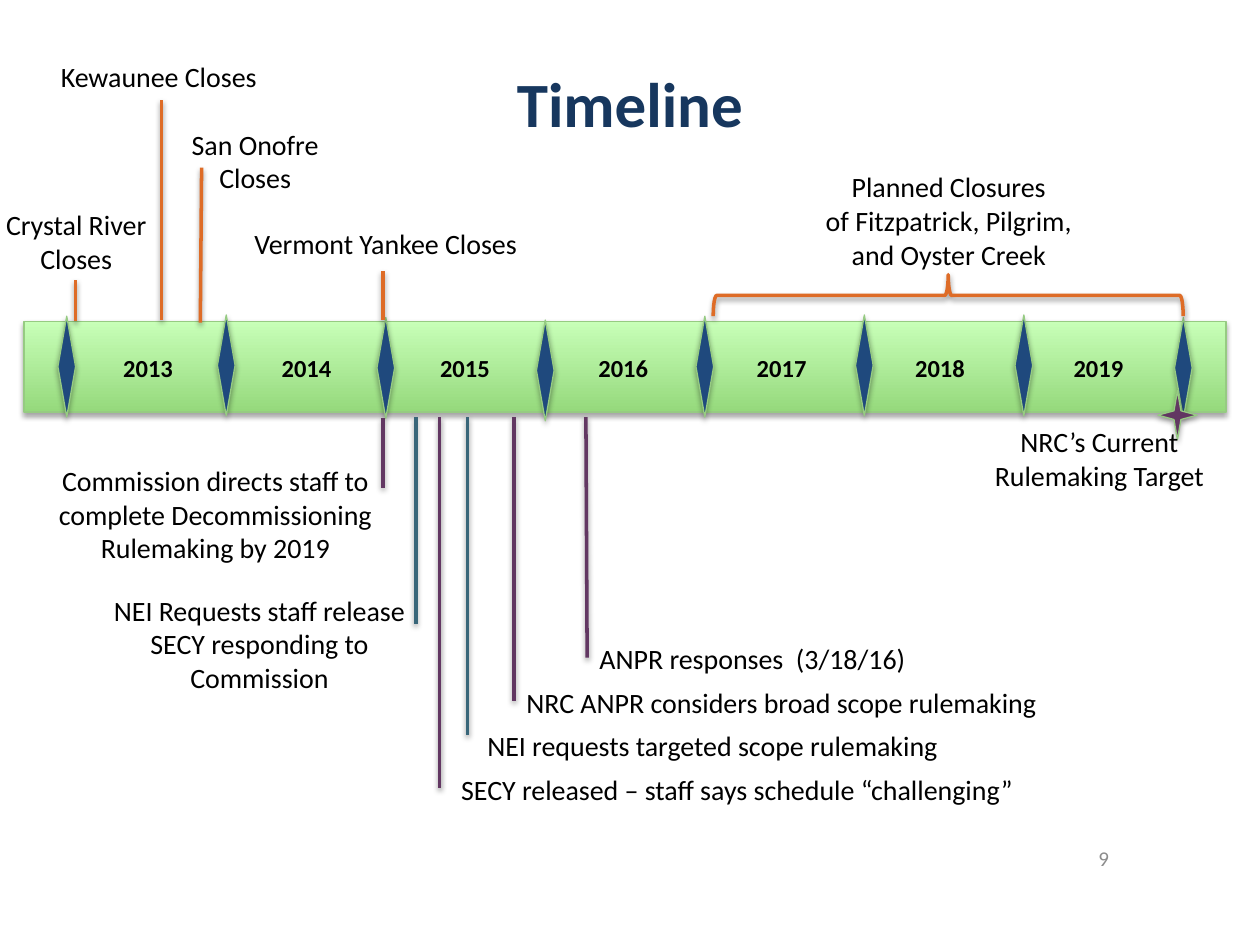
from lxml import etree
from pptx import Presentation
from pptx.dml.color import RGBColor
from pptx.enum.shapes import MSO_CONNECTOR, MSO_SHAPE
from pptx.enum.text import MSO_ANCHOR, MSO_AUTO_SIZE, PP_ALIGN
from pptx.oxml.ns import qn
from pptx.util import Inches, Pt

LEFT, CENTER, RIGHT = PP_ALIGN.LEFT, PP_ALIGN.CENTER, PP_ALIGN.RIGHT
TOP, MIDDLE = MSO_ANCHOR.TOP, MSO_ANCHOR.MIDDLE
STRAIGHT = MSO_CONNECTOR.STRAIGHT
RECTANGLE, STAR = MSO_SHAPE.RECTANGLE, MSO_SHAPE.STAR_4_POINT
DIAMOND, BRACE = MSO_SHAPE.FLOWCHART_DECISION, MSO_SHAPE.LEFT_BRACE

# The slide is a grid of 100 columns by 75 rows.
COLUMNS, ROWS = 100, 75
CELL = Inches(0.1)

FONT = "Calibri"
BLACK, NAVY, GREY = "000000", "17375E", "8C8C8C"
ORANGE, PURPLE, TEAL = "DE6C27", "623762", "396679"
MARKER_BLUE, EDGE_GREEN = "1F497D", "96CB82"
BAND_DARK, BAND_LIGHT = "95D97C", "C8FFB8"

MARKER_TOPS = [25.1, 25, 25.2, 25.4, 25.1, 25, 25, 25.2]
MARKER_START, MARKER_STEP = 4.6, 12.66
YEAR_START, YEAR_STEP = 8.8, 12.57

# Start column and row, end column and row, colour
EVENT_LINES = [
    (30.4, 25.4, 30.4, 21.5, ORANGE),
    (15.9, 25.6, 16, 13.3, ORANGE),
    (6, 25.5, 6, 22.2, ORANGE),
    (12.8, 25.4, 12.8, 7.9, ORANGE),
    (30.4, 33.2, 30.4, 38.7, PURPLE),
    (33, 33.1, 33, 49.5, TEAL),
    (34.9, 33.1, 34.9, 62.5, PURPLE),
    (37.1, 33.1, 37.1, 58.3, TEAL),
    (40.8, 33.1, 40.8, 55.6, PURPLE),
    (46.5, 33.1, 46.6, 52.2, PURPLE),
]

# Left, top, width, height, paragraphs
WRAPPED_LABELS = [
    (3.3, 36.3, 27.6, 9.1, ["Commission directs staff to complete Decommissioning Rulemaking by 2019"]),
    (7.6, 46.6, 26, 9.1, ["NEI Requests staff release SECY responding to Commission"]),
    (34.9, 60.8, 47.2, 3.7, ["SECY released – staff says schedule “challenging”"]),
    (37.1, 57.3, 38.9, 3.7, ["NEI requests targeted scope rulemaking"]),
    (77, 33.2, 20.5, 6.4, ["NRC’s Current Rulemaking Target"]),
    (-1.6, 16, 15.3, 6.4, ["Crystal River Closes"]),
    (2, 4.2, 21.2, 3.7, ["Kewaunee Closes"]),
]
UNWRAPPED_LABELS = [
    (64.4, 13, 21.8, 9.1, ["Planned Closures", "of Fitzpatrick, Pilgrim,", "and Oyster Creek"], CENTER),
    (13.9, 9.6, 12.7, 6.4, ["San Onofre", "Closes"], CENTER),
    (19.2, 17.5, 23.1, 3.7, ["Vermont Yankee Closes"], LEFT),
    (40.8, 53.9, 43, 3.7, ["NRC ANPR considers broad scope rulemaking"], LEFT),
    (46.6, 50.4, 26.6, 3.7, ["ANPR responses  (3/18/16)"], LEFT),
]


def cells(*values):
    return [round(value * CELL) for value in values]


def color(hex_code):
    return RGBColor.from_string(hex_code)


def add_shadow(item, opacity, distance):
    """Cast a soft black shadow downwards; the outline must be set first."""
    effects = etree.SubElement(item._element.spPr, qn("a:effectLst"))
    shadow = etree.SubElement(
        effects, qn("a:outerShdw"), blurRad=str(Pt(3.1)), dist=str(Pt(distance)),
        dir="5400000", rotWithShape="0")
    black = etree.SubElement(shadow, qn("a:srgbClr"), val=BLACK)
    etree.SubElement(black, qn("a:alpha"), val=str(opacity * 1000))


def add_marker(page, kind, frame, fill=None):
    """Add a green-edged shape with a shadow; without a fill it gets the band gradient."""
    shape = page.shapes.add_shape(kind, *cells(*frame))
    if fill:
        shape.fill.solid()
        shape.fill.fore_color.rgb = color(fill)
    else:
        shape.fill.gradient()
        shape.fill.gradient_angle = 90
        for stop, shade in zip(shape.fill.gradient_stops, (BAND_DARK, BAND_LIGHT)):
            stop.color.rgb = color(shade)
    shape.line.color.rgb = color(EDGE_GREEN)
    shape.line.width = Pt(0.75)
    add_shadow(shape, 35, 1.8)


def add_brace(page, frame):
    brace = page.shapes.add_shape(BRACE, *cells(*frame))
    brace.rotation = 90
    brace.fill.background()
    brace.line.color.rgb = color(ORANGE)
    brace.line.width = Pt(2)
    add_shadow(brace, 38, 1.6)


def add_event_line(page, ends, shade):
    line = page.shapes.add_connector(STRAIGHT, *cells(*ends))
    line.line.color.rgb = color(shade)
    line.line.width = Pt(2)
    add_shadow(line, 38, 1.6)


def add_text(page, frame, paragraphs, size=16, shade=BLACK, bold=False,
             align=CENTER, anchor=TOP, wrap=True, grow=True):
    box = page.shapes.add_textbox(*cells(*frame))
    text = box.text_frame
    text.word_wrap = wrap
    text.auto_size = MSO_AUTO_SIZE.SHAPE_TO_FIT_TEXT if grow else MSO_AUTO_SIZE.NONE
    text.vertical_anchor = anchor
    for index, words in enumerate(paragraphs):
        para = text.paragraphs[0] if index == 0 else text.add_paragraph()
        para.alignment = align
        span = para.add_run()
        span.text = words
        span.font.name = FONT
        span.font.size = Pt(size)
        span.font.bold = bold
        span.font.color.rgb = color(shade)


def add_year_band(page):
    add_marker(page, RECTANGLE, (1.9, 25.5, 95.4, 7.2))
    for index, top in enumerate(MARKER_TOPS):
        left = MARKER_START + index * MARKER_STEP
        add_marker(page, DIAMOND, (left, top, 1.4, 8), MARKER_BLUE)
    for index, year in enumerate(range(2013, 2020)):
        left = YEAR_START + index * YEAR_STEP
        add_text(page, (left, 27.5, 6, 3.4), [str(year)], size=14, bold=True,
                 align=LEFT, wrap=False)


def main():
    deck = Presentation()
    deck.slide_width, deck.slide_height = cells(COLUMNS, ROWS)
    page = deck.slides.add_slide(deck.slide_layouts[6])

    add_text(page, (0, 2.8, COLUMNS, 10.6), ["Timeline"], size=36, shade=NAVY,
             bold=True, anchor=MIDDLE, grow=False)
    add_year_band(page)
    add_brace(page, (73.6, 4.8, 3.3, 37.3))
    for *ends, shade in EVENT_LINES:
        add_event_line(page, ends, shade)
    add_marker(page, STAR, (91.9, 31, 3.1, 3.9), PURPLE)
    for *frame, words in WRAPPED_LABELS:
        add_text(page, frame, words)
    for *frame, words, align in UNWRAPPED_LABELS:
        add_text(page, frame, words, align=align, wrap=False)
    add_text(page, (65.7, 66.1, 23.3, 4), ["9"], size=12, shade=GREY,
             align=RIGHT, anchor=MIDDLE, grow=False)

    deck.save("out.pptx")


if __name__ == "__main__":
    main()
